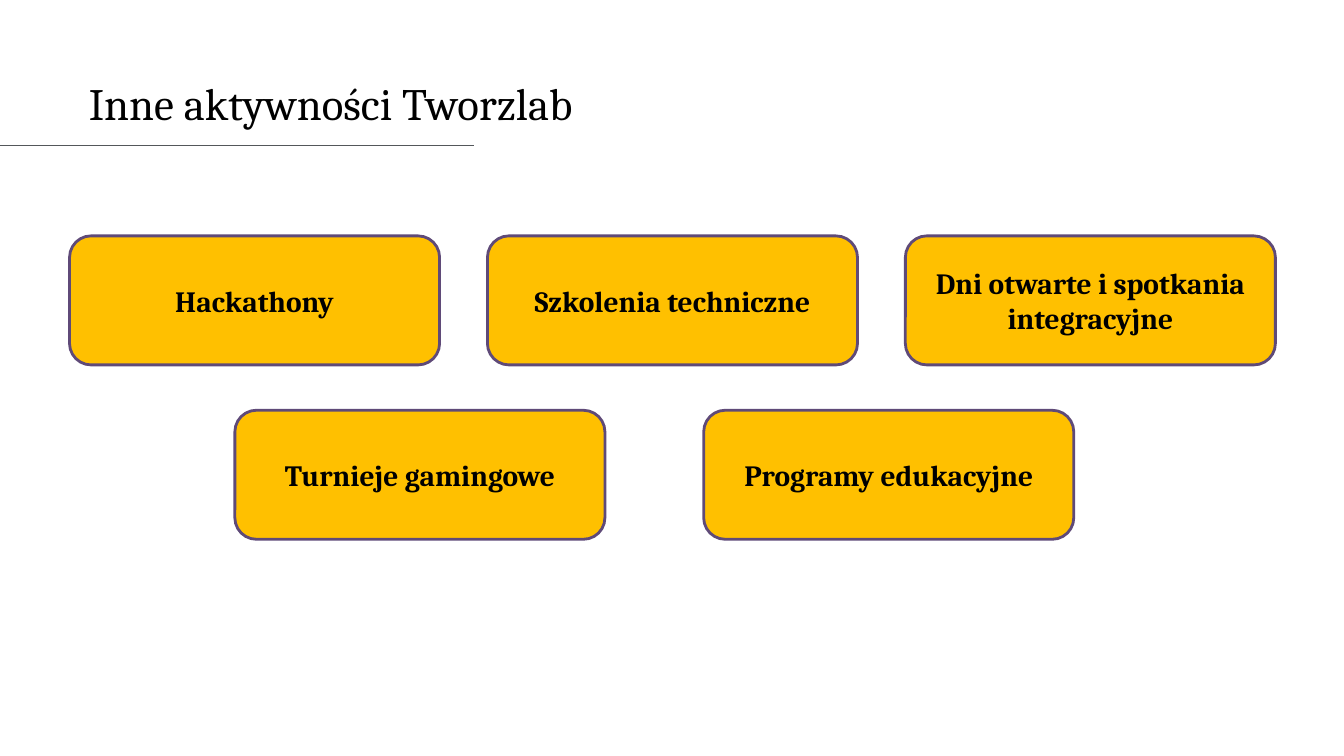
from lxml import etree
from pptx import Presentation
from pptx.dml.color import RGBColor
from pptx.enum.shapes import MSO_CONNECTOR, MSO_SHAPE
from pptx.enum.text import MSO_ANCHOR, PP_ALIGN
from pptx.oxml.ns import qn
from pptx.util import Inches, Pt

COLORS = {"text": "000000", "rule": "53575A", "card": "FFC000", "border": "5F4A78"}
FONT = "Cambria"
CARD_W, CARD_H = 3.67, 1.28
# Each row: left, top, horizontal step, labels
ROWS = [
    (0.69, 2.34, 4.145, ["Hackathony", "Szkolenia techniczne",
                         "Dni otwarte i spotkania integracyjne"]),
    (2.33, 4.07, 4.65, ["Turnieje gamingowe", "Programy edukacyjne"]),
]


def color(name):
    return RGBColor.from_string(COLORS[name])


def write(shape, text, size, align, bold=False):
    tf = shape.text_frame
    tf.word_wrap = True
    tf.text = text
    p = tf.paragraphs[0]
    p.alignment = align
    font = p.runs[0].font
    font.name = FONT
    font.size = Pt(size)
    font.bold = bold
    font.color.rgb = color("text")


def add_title(s, text):
    box = s.shapes.add_textbox(Inches(0.69), Inches(0.7), Inches(5.09), Inches(0.64))
    write(box, text, 32, PP_ALIGN.RIGHT)


def add_rule(s):
    rule = s.shapes.add_connector(
        MSO_CONNECTOR.STRAIGHT, Inches(0), Inches(1.44), Inches(4.7), Inches(1.44))
    rule.line.color.rgb = color("rule")
    rule.line.width = Pt(0.75)
    etree.SubElement(rule._element.spPr, qn("a:effectLst"))


def add_card(s, left, top, label):
    card = s.shapes.add_shape(
        MSO_SHAPE.ROUNDED_RECTANGLE,
        Inches(left), Inches(top), Inches(CARD_W), Inches(CARD_H))
    card.shadow.inherit = False
    card.fill.solid()
    card.fill.fore_color.rgb = color("card")
    card.line.color.rgb = color("border")
    card.line.width = Pt(2)
    card.text_frame.vertical_anchor = MSO_ANCHOR.MIDDLE
    write(card, label, 21, PP_ALIGN.CENTER, bold=True)


def main():
    prs = Presentation()
    prs.slide_width = Inches(13.33)
    prs.slide_height = Inches(7.5)
    s = prs.slides.add_slide(prs.slide_layouts[6])
    add_title(s, "Inne aktywności Tworzlab")
    add_rule(s)
    for left, top, step, labels in ROWS:
        for i, label in enumerate(labels):
            add_card(s, left + i * step, top, label)
    prs.save("out.pptx")


if __name__ == "__main__":
    main()
